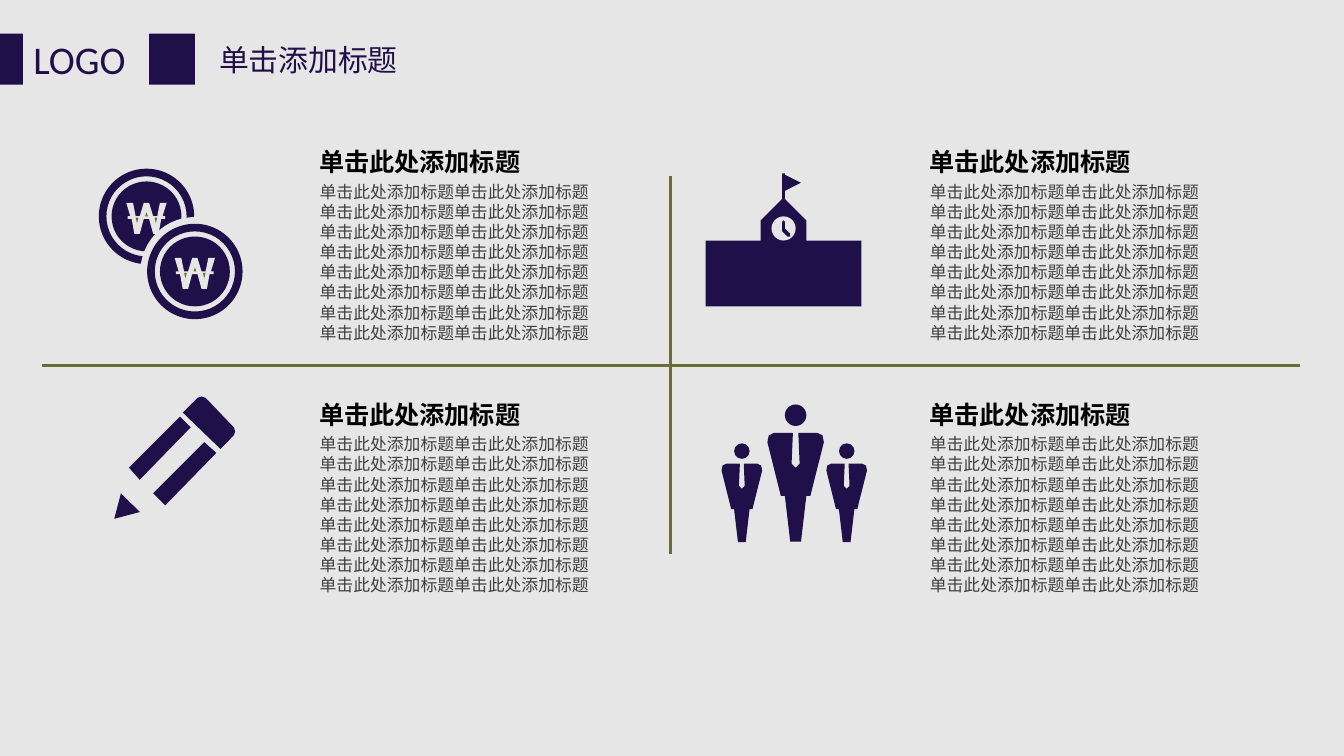
from lxml import etree
from pptx import Presentation, util as u
from pptx.dml.color import RGBColor
from pptx.enum import shapes as s, text as t
from pptx.oxml.ns import qn

NAVY = RGBColor(0x1F, 0x10, 0x49)
OLIVE = RGBColor(0x68, 0x6C, 0x39)
GRAY = RGBColor(0xE7, 0xE6, 0xE6)
BLACK = RGBColor(0, 0, 0)
DARK = RGBColor(0x3F, 0x3F, 0x3F)
SANS, CJK = "Calibri", "Noto Sans CJK SC"

PHRASE = "单击此处添加标题"
# Text lines per paragraph, in each cell of the grid
CELLS = [
    [(1, 1, 3, 1, 2), (1, 1, 3, 1, 2)],
    [(1, 1, 3, 1, 2), (1, 1, 2, 1, 1, 2)],
]
LEFT, TOP, COL, ROW = 2.28, 1.04, 4.54, 1.88
GAP = 0.26  # heading top to body top

BARS = [(0, 0.25, 0.17, 0.38), (1.11, 0.25, 0.34, 0.38)]
AXES = [(4.99, 1.31, 4.99, 4.12), (0.31, 2.72, 9.67, 2.72)]

COINS = [(1.09, 1.61), (1.45, 2.02)]
# Right half of the won sign, from the top middle to the bottom middle
WON = [(0.02, -0.1), (0.05, 0), (0.08, 0), (0.1, -0.1), (0.15, -0.1),
       (0.12, 0), (0.14, 0), (0.14, 0.02), (0.11, 0.02), (0.09, 0.13),
       (0.05, 0.13), (0.02, 0.02)]
HOLES = [
    [(-0.07, 0.05), (-0.06, 0.01), (-0.08, 0.01)],
    [(0.07, 0.05), (0.08, 0.01), (0.06, 0.01)],
    [(0, -0.03), (0.01, 0), (-0.01, 0)],
]

PENCIL = [
    [(1.42, 3.18), (1.34, 3.1), (0.96, 3.48), (1.04, 3.57)],
    [(1.52, 3.29), (1.14, 3.67), (1.23, 3.76), (1.61, 3.37)],
    [(0.85, 3.86), (1.04, 3.81), (0.9, 3.67)],
    [(1.74, 3.18), (1.53, 2.96), (1.5, 2.95), (1.47, 2.96), (1.36, 3.07),
     (1.64, 3.34), (1.74, 3.24), (1.75, 3.21)],
]

SCHOOL = [(6, 1.79), (6, 1.64), (5.84, 1.48), (5.84, 1.42), (5.96, 1.36),
          (5.84, 1.3), (5.84, 1.29), (5.82, 1.29), (5.82, 1.48),
          (5.66, 1.64), (5.66, 1.79), (5.25, 1.79), (5.25, 2.28),
          (6.41, 2.28), (6.41, 1.79)]
CLOCK = (5.83, 1.7, 0.18)
HANDS = [(5.82, 1.65), (5.83, 1.64), (5.84, 1.65), (5.84, 1.7),
         (5.88, 1.74), (5.88, 1.76), (5.86, 1.76), (5.82, 1.72)]

# Centre, shoulder height and scale of each person
TEAM = [(5.92, 3.22, 1), (5.52, 3.45, 0.72), (6.3, 3.45, 0.72)]
# Right half of a person, from the collar to the foot
BODY = [(0.02, 0), (0.16, 0), (0.2, 0.02), (0.21, 0.07), (0.13, 0.39),
        (0.11, 0.47), (0.08, 0.47), (0.04, 0.81)]
TIE = [(-0.03, 0.23), (0, 0.26), (0.03, 0.23)]

prs = Presentation()
prs.slide_width = u.Inches(10)
prs.slide_height = prs.slide_width * 9 // 16
slide = prs.slides.add_slide(prs.slide_layouts[5])
slide.background.fill.solid()
slide.background.fill.fore_color.rgb = GRAY
art = slide.shapes


def inches(vals):
    return [u.Inches(v) for v in vals]


def paint(shape, color):
    shape.shadow.inherit = False
    shape.fill.solid()
    shape.fill.fore_color.rgb = color
    shape.line.fill.background()
    return shape


def preset(kind, box, color=NAVY):
    return paint(art.add_shape(kind, *inches(box)), color)


def disc(x, y, size, color=NAVY, kind=s.MSO_SHAPE.OVAL):
    return preset(kind, (x - size / 2, y - size / 2, size, size), color)


def outline(pts, color=NAVY, x=0, y=0, k=1):
    """Draw a closed polygon, scaled by k and moved to x, y."""
    pts = [inches((x + k * a, y + k * b)) for a, b in pts]
    pen = art.build_freeform(*pts[0])
    pen.add_line_segments(pts[1:], close=True)
    paint(pen.convert_to_shape(), color)


def mirror(half):
    return half + [(-a, b) for a, b in reversed(half)]


def write(box, lines, face, color, size, bold=False, pitch=None,
          shape=None, anchor=t.MSO_ANCHOR.TOP):
    """Fill a text box, or the given shape, with one paragraph per line."""
    shape = shape or art.add_textbox(0, 0, 0, 0)
    shape.left, shape.top, shape.width, shape.height = inches(box)
    frame = shape.text_frame
    frame.text = "\n".join(lines)
    frame.word_wrap, frame.vertical_anchor = True, anchor
    form = {"size": u.Pt(size), "bold": bold, "name": face}
    for par in frame.paragraphs:
        par.alignment = t.PP_ALIGN.LEFT
        if pitch:
            par.line_spacing = u.Pt(pitch)
        for run in par.runs:
            run.font.color.rgb = color
            for key, val in form.items():
                setattr(run.font, key, val)
            east = etree.SubElement(run._r.get_or_add_rPr(), qn("a:ea"))
            east.set("typeface", CJK)


def coin(x, y):
    ring = disc(x, y, 0.71, kind=s.MSO_SHAPE.DONUT)
    ring.adjustments[0] = 0.08
    disc(x, y, 0.52)
    outline(mirror(WON), GRAY, x, y)
    for hole in HOLES:
        outline(hole, OLIVE, x, y)


def person(x, y, k):
    disc(x, y - 0.13 * k, 0.16 * k)
    outline(mirror(BODY) + TIE, NAVY, x, y, k)


write((0.15, 0.21, 1.01, 0.45), ["LOGO"], SANS, NAVY, 21)
for bar in BARS:
    preset(s.MSO_SHAPE.RECTANGLE, bar)
write((1.53, 0.26, 2.16, 0.37), ["单击添加标题"], SANS, NAVY, 16,
      shape=art.title, anchor=t.MSO_ANCHOR.MIDDLE)

for ends in AXES:
    axis = art.add_connector(s.MSO_CONNECTOR.STRAIGHT, *inches(ends))
    axis.line.color.rgb, axis.line.width = OLIVE, u.Pt(1.25)
    etree.SubElement(axis._element.spPr, qn("a:effectLst"))

coin(*COINS[0])
disc(*COINS[1], 0.81, GRAY)
coin(*COINS[1])
for part in PENCIL:
    outline(part)
outline(SCHOOL)
disc(*CLOCK, GRAY)
outline(HANDS)
for one in TEAM:
    person(*one)

for r, row in enumerate(CELLS):
    for c, counts in enumerate(row):
        x, y = LEFT + c * COL, TOP + r * ROW
        write((x, y, 1.86, 0.71), [PHRASE], CJK, BLACK, 13.5, True, 16.2)
        write((x, y + GAP, 2.29, 1.46), [PHRASE * 2 * n for n in counts],
              CJK, DARK, 9, pitch=10.8)

prs.save("out.pptx")
